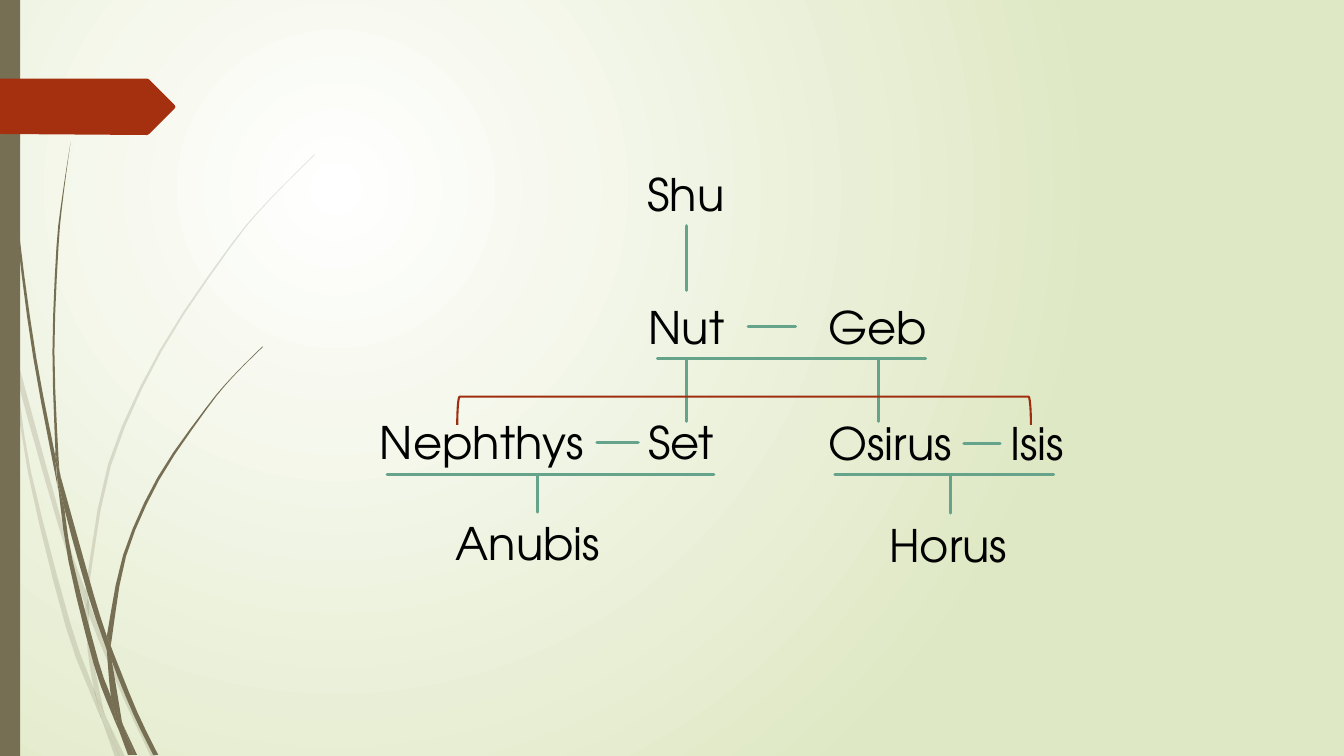
from lxml import etree
from pptx import Presentation
from pptx.dml.color import RGBColor
from pptx.enum.shapes import MSO_CONNECTOR, MSO_SHAPE
from pptx.enum.text import MSO_AUTO_SIZE, PP_ALIGN
from pptx.oxml.ns import qn
from pptx.util import Inches, Pt

LINE = MSO_CONNECTOR.STRAIGHT
RECT, CLASP = MSO_SHAPE.RECTANGLE, MSO_SHAPE.RIGHT_BRACKET
FIT = MSO_AUTO_SIZE.SHAPE_TO_FIT_TEXT
LEFT, MID = PP_ALIGN.LEFT, PP_ALIGN.CENTER

FONT = "TeX Gyre Adventor"
HEX = {"white": "FFFFFF", "lime": "DFE8C4", "olive": "766F54", "red": "A53010",
       "rust": "9E2E0F", "green": "65A48B", "black": "000000"}

# Family members: name, left, top, width
NAMES = [
    ("Nut", 6.33, 2.92, 0.96), ("Geb", 8.12, 2.92, 1.19),
    ("Osirus", 8.12, 4.08, 1.44), ("Set", 6.33, 4.07, 0.87),
    ("Isis", 9.92, 4.08, 0.74), ("Nephthys", 3.67, 4.07, 2.24),
    ("Anubis", 4.42, 5.07, 1.65), ("Horus", 8.72, 5.09, 1.39),
]
# Couples: line from x to x at y
PAIRS = [(7.42, 7.89, 3.24), (5.92, 6.33, 4.39), (9.56, 9.92, 4.4)]
BARS = [(6.52, 9.18, 3.56), (3.84, 7.08, 4.71), (8.28, 10.45, 4.71)]
# Descent: line at x from y to y
DROPS = [(6.81, 2.24, 2.88), (6.81, 3.56, 4.18), (8.71, 3.56, 4.18),
         (5.33, 4.71, 5.08), (9.43, 4.72, 5.09)]

# Grass: each piece has one side running out and one running back
PALE = [
    ([(0.11, 3.5), (0.09, 3.22), (0, 2.82)], [(0, 2.99), (0.1, 3.44)]),
    ([(0.14, 3.45), (0.17, 3.76), (0.58, 5.22), (0.84, 5.99)],
     [(0.85, 5.86), (0.62, 5.2), (0.14, 3.45)]),
    ([(0.88, 5.96), (0.88, 6.1), (1.23, 6.94), (1.5, 7.51)],
     [(1.55, 7.51), (1.27, 6.92), (0.92, 6.07)]),
    ([(1.05, 7.11), (1.19, 7.51)], [(1.24, 7.51), (1.05, 7.11)]),
    ([(0.11, 3.5), (0.28, 4.7), (0.65, 6.21), (0.92, 6.93), (1.01, 7.14)],
     [(0.99, 7.07), (0.93, 6.83), (0.7, 6.19), (0.31, 4.69), (0.17, 3.76)]),
    ([(0.84, 5.99), (0.87, 6.46), (0.93, 6.83), (0.96, 6.92), (1.05, 7.11)],
     [(1.03, 7.06), (0.91, 6.46), (0.88, 6.08)]),
    ([(0.88, 5.96), (0.88, 5.84), (1.1, 4.62), (1.6, 3.49), (2.29, 2.45),
      (2.68, 1.98), (3.12, 1.54)],
     [(3.12, 1.53), (2.68, 1.97), (2.28, 2.44), (1.58, 3.48), (1.07, 4.61),
      (0.85, 5.84), (0.85, 5.86)]),
    ([(1.01, 7.14), (1.14, 7.51)], [(1.19, 7.51), (1.01, 7.14)]),
    ([(0.88, 6.1), (0.88, 5.96), (0.85, 5.86)], [(0.84, 5.99), (0.88, 6.08)]),
    ([(0.93, 6.83), (0.99, 7.07), (1.01, 7.14), (1.19, 7.51)],
     [(1.19, 7.51), (1.05, 7.11), (0.96, 6.92)]),
]
DARK = [
    ([(0.03, 0), (0.04, 0.48), (0.07, 1.1), (0.17, 2.33), (0.33, 3.55),
      (0.56, 4.77), (0.57, 4.81)],
     [(0.55, 4.57), (0.55, 4.53), (0.36, 3.55), (0.19, 2.32), (0.08, 1.09),
      (0.05, 0.48), (0.04, 0)]),
    ([(0.6, 4.72), (0.64, 5.05), (0.88, 5.92), (1.06, 6.45)],
     [(1.06, 6.31), (0.93, 5.9), (0.6, 4.72)]),
    ([(1.1, 6.41), (1.11, 6.56), (1.32, 7.08), (1.52, 7.49)],
     [(1.57, 7.49), (1.36, 7.06), (1.13, 6.49)]),
    ([(0.57, 4.77), (0.68, 5.57), (0.93, 6.59), (1.11, 7.08), (1.17, 7.22)],
     [(1.16, 7.17), (1.1, 6.91), (0.98, 6.57), (0.72, 5.56), (0.64, 5.05)]),
    ([(0.6, 4.72), (0.58, 4.53), (0.54, 3.49), (0.58, 2.45), (0.63, 1.93),
      (0.7, 1.41)],
     [(0.7, 1.41), (0.62, 1.93), (0.56, 2.45), (0.52, 3.49), (0.55, 4.49)]),
    ([(1.22, 7.19), (1.33, 7.49)], [(1.36, 7.49), (1.22, 7.19)]),
    ([(0.57, 4.77), (0.64, 5.05)], [(0.6, 4.72), (0.55, 4.49), (0.55, 4.53)]),
    ([(1.1, 6.41), (1.11, 6.33), (1.25, 5.52), (1.58, 4.76), (2.05, 4.06),
      (2.31, 3.74), (2.61, 3.44)],
     [(2.6, 3.44), (2.31, 3.73), (2.04, 4.05), (1.56, 4.74), (1.22, 5.51),
      (1.06, 6.31)]),
    ([(1.17, 7.22), (1.27, 7.49)], [(1.31, 7.49), (1.17, 7.22)]),
    ([(1.06, 6.45), (1.1, 6.91), (1.16, 7.06), (1.22, 7.19)],
     [(1.21, 7.16), (1.11, 6.56), (1.09, 6.51)]),
    ([(1.06, 6.31), (1.06, 6.45), (1.11, 6.56)], [(1.1, 6.41), (1.06, 6.31)]),
    ([(1.1, 6.91), (1.16, 7.17), (1.17, 7.22), (1.3, 7.49)],
     [(1.33, 7.49), (1.22, 7.19), (1.16, 7.06)]),
]
TAG = [(0, 0.78), (1.46, 0.78), (1.48, 0.79), (1.73, 1.04), (1.74, 1.06),
       (1.73, 1.08), (1.48, 1.33), (1.46, 1.34), (0, 1.33)]


def rgb(name):
    return RGBColor.from_string(HEX[name])


def paint(shape, color):
    shape.shadow.inherit = False
    shape.fill.solid()
    shape.fill.fore_color.rgb = rgb(color)
    shape.line.fill.background()


def stroke(line, color, width):
    line.color.rgb, line.width = rgb(color), Pt(width)


def draw(kind, *box):
    return slide.shapes.add_shape(kind, *map(Inches, box))


def write(text, left, top, width, align=LEFT, wrap=False, size=32, color="black"):
    box = slide.shapes.add_textbox(*map(Inches, (left, top, width, 0.64)))
    frame = box.text_frame
    frame.word_wrap, frame.auto_size = wrap, FIT
    para = frame.paragraphs[0]
    para.alignment = align
    run = para.add_run()
    run.text = text
    run.font.name, run.font.size = FONT, Pt(size)
    run.font.color.rgb = rgb(color)


def link(x1, y1, x2, y2):
    line = slide.shapes.add_connector(LINE, *map(Inches, (x1, y1, x2, y2)))
    stroke(line.line, "green", 2.25)
    line._element.spPr.find(qn("a:ln")).set("cap", "rnd")
    etree.SubElement(line._element.spPr, qn("a:effectLst"))


def curve(knots, steps=3):
    """Smooth points through the knots (Catmull-Rom)."""
    ends = [knots[0], *knots, knots[-1]]
    out = []
    for a, b, c, d in zip(ends, ends[1:], ends[2:], ends[3:]):
        for i in range(steps):
            t = i / steps
            out.append(tuple(
                q + t * (r - p) / 2 + t * t * (2 * p - 5 * q + 4 * r - s) / 2
                + t ** 3 * (3 * q - p - 3 * r + s) / 2
                for p, q, r, s in zip(a, b, c, d)))
    return out + [knots[-1]]


def outline(shapes, points, color):
    rim = [(Inches(x), Inches(y)) for x, y in points]
    form = shapes.build_freeform(*rim[0])
    form.add_line_segments(rim[1:], close=True)
    shape = form.convert_to_shape()
    paint(shape, color)
    return shape


def grass(pieces, alpha=None):
    group = slide.shapes.add_group_shape()
    for out, back in pieces:
        piece = outline(group.shapes, curve(out) + curve(back), "olive")
        if alpha:
            tint = piece._element.spPr.find(qn("a:solidFill"))[0]
            etree.SubElement(tint, qn("a:alpha"), val=str(alpha * 1000))


deck = Presentation()
deck.slide_width, deck.slide_height = Inches(13.33), Inches(7.5)
slide = deck.slides.add_slide(deck.slide_layouts[6])

# Radial background
fill = slide.background.fill
fill.gradient()
for stop, name, place in zip(fill.gradient_stops, ("white", "lime"), (0, 1)):
    stop.color.rgb, stop.position = rgb(name), place
grad = slide._element.find(".//" + qn("a:gradFill"))
grad.remove(grad.find(qn("a:lin")))
glow = etree.SubElement(grad, qn("a:path"), {"path": "circle"})
etree.SubElement(glow, qn("a:fillToRect"), l="50000", t="50000", r="100000", b="100000")

# Grass, side bar and tag
grass(PALE, alpha=20)
grass(DARK)
paint(draw(RECT, 0, 0, 0.2, 7.5), "olive")
outline(slide.shapes, TAG, "red")

# Family tree
write("Shu", 3.96, 1.6, 5.69, align=MID, wrap=True)
for name in NAMES:
    write(*name)
for x1, x2, y in PAIRS + BARS:
    link(x1, y, x2, y)
for x, y1, y2 in DROPS:
    link(x, y1, x, y2)

# Bracket from Nephthys to Isis
clasp = draw(CLASP, 7.24, 1.23, 0.28, 5.69)
clasp.rotation = 90
clasp._element.spPr.find(qn("a:xfrm")).set("flipH", "1")
clasp.shadow.inherit = False
clasp.fill.background()
stroke(clasp.line, "rust", 1.5)

deck.save("out.pptx")
